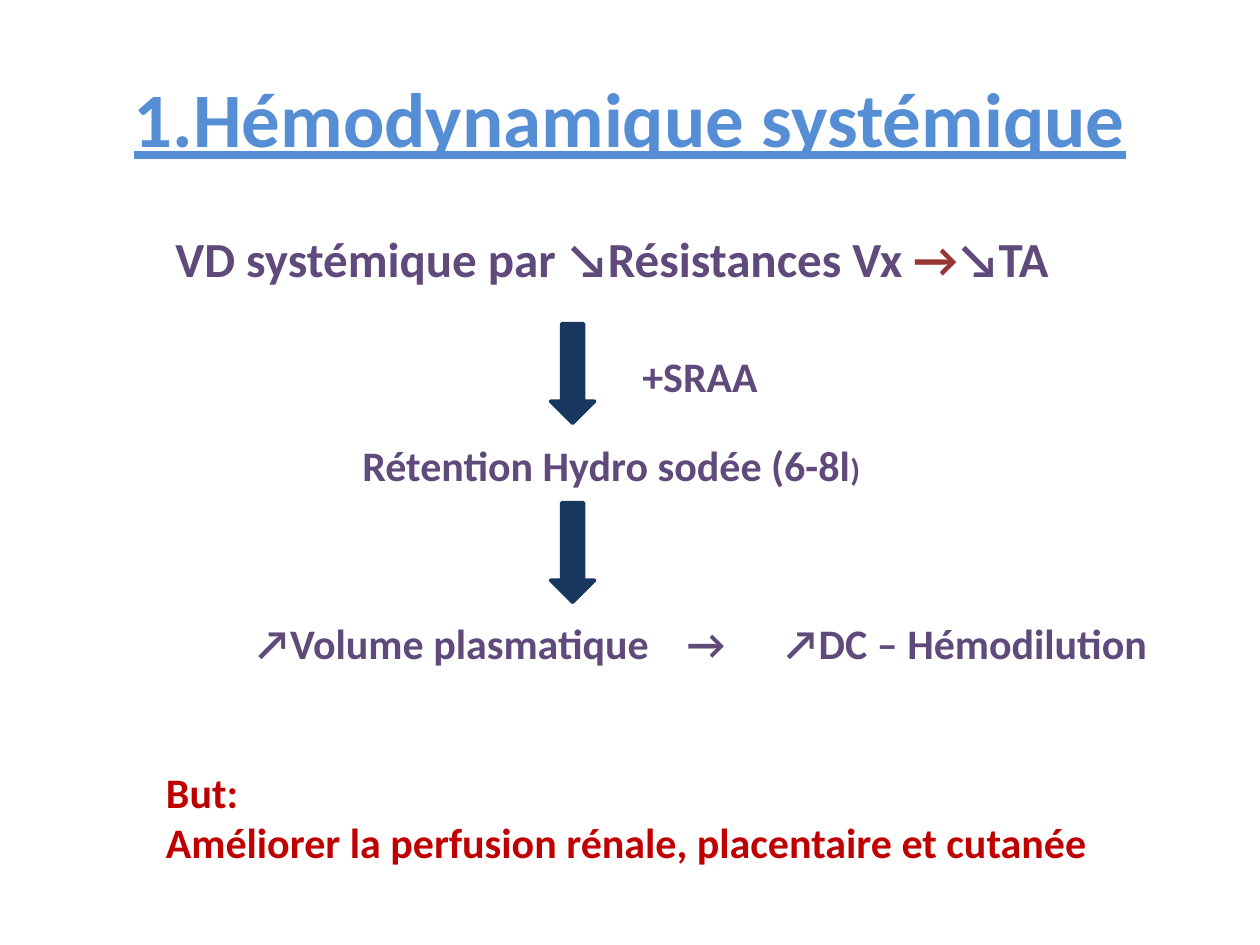
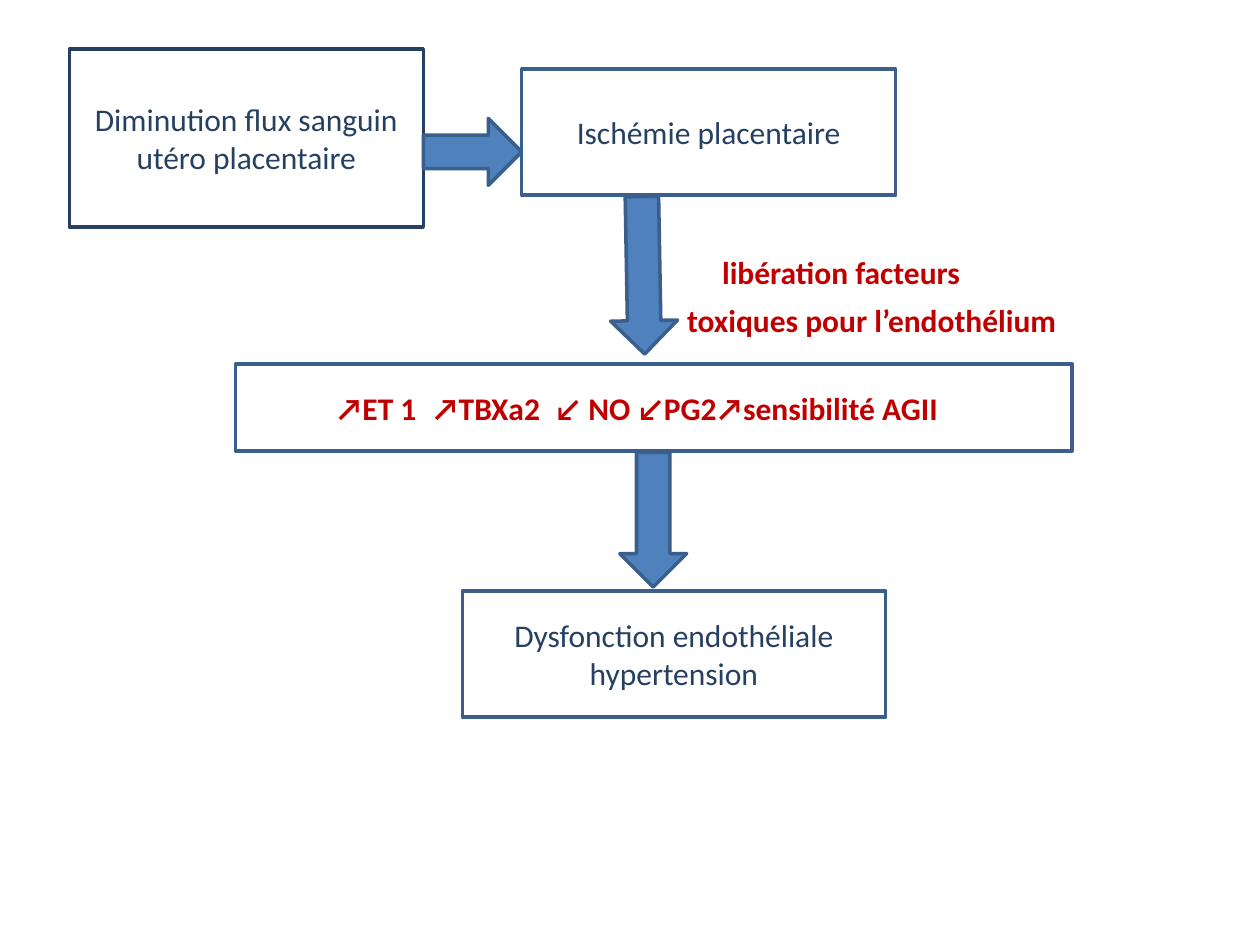
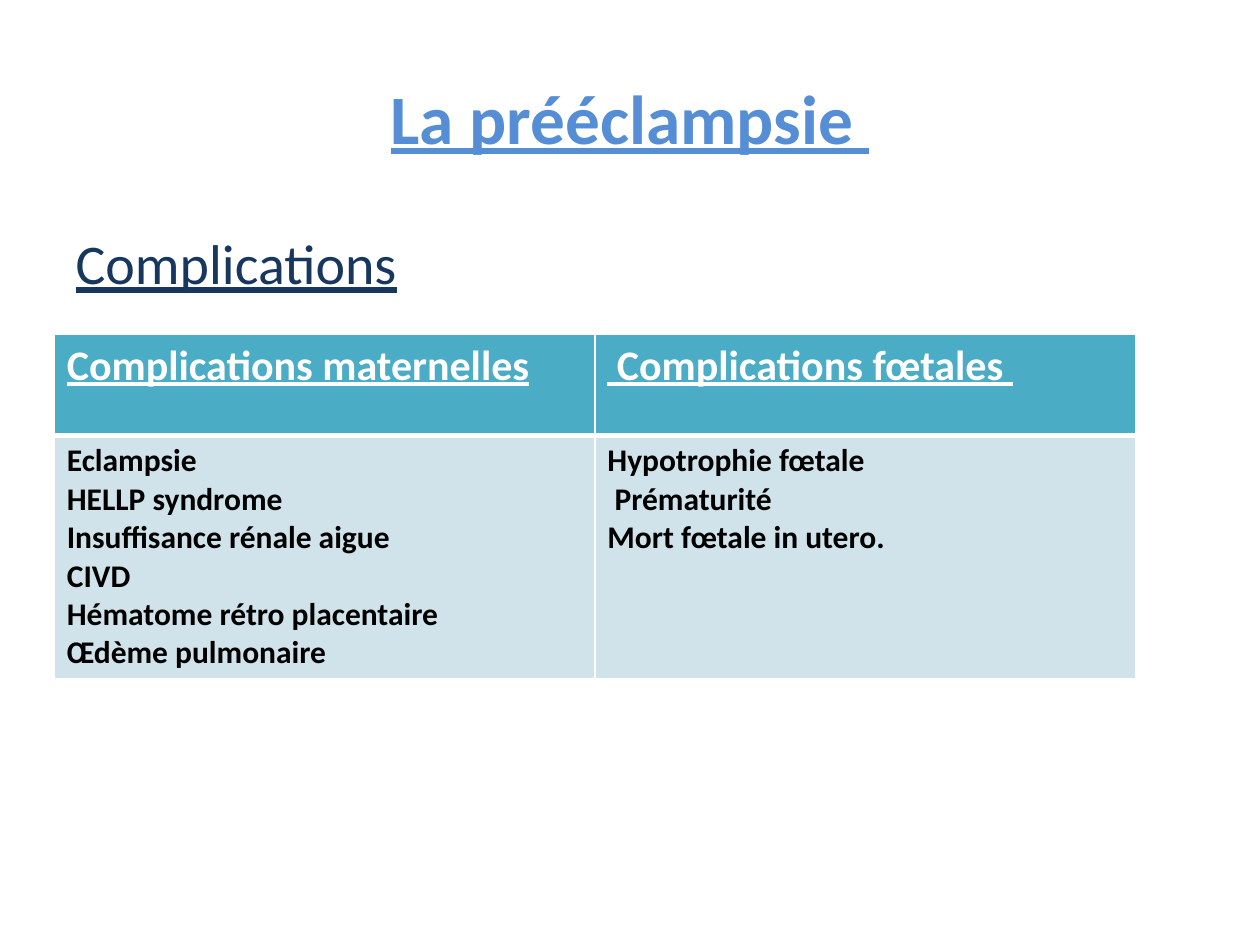
from dataclasses import dataclass

from lxml.etree import SubElement
from pptx import Presentation
from pptx.dml.color import RGBColor as Rgb
from pptx.enum.shapes import MSO_SHAPE as Shape
from pptx.enum.text import MSO_ANCHOR as Anchor
from pptx.enum.text import MSO_AUTO_SIZE as AutoSize
from pptx.enum.text import PP_ALIGN as Align
from pptx.oxml.ns import qn
from pptx.util import Pt


@dataclass(frozen=True)
class Theme:
    font: str = "Calibri"
    white: str = "FFFFFF"
    black: str = "000000"
    title: str = "558ED5"
    navy: str = "17375E"
    ink: str = "254061"
    purple: str = "604A7B"
    brown: str = "953735"
    red: str = "C00000"
    arrow: str = "4F81BD"
    outline: str = "3A5F8C"
    header: str = "4BACC6"
    cell: str = "D0E3EA"
    title_size: float = 44
    short_title_size: float = 39.6
    heading_size: float = 32
    lead_size: float = 28
    step_size: float = 24
    text_size: float = 18
    line_width: float = 2


THEME = Theme()
TITLE_AREA = (36, 21.6, 648, 90)
BODY_AREA = (36, 127, 648, 355)
FACTORS_AREA = (36, 141, 648, 341)


def text_style(size, color, bold=False, underline=False):
    return {
        "name": THEME.font,
        "size": Pt(size),
        "bold": bold,
        "underline": underline,
        "color": color,
    }


STEP = text_style(THEME.step_size, THEME.purple, bold=True)
LEAD = text_style(THEME.lead_size, THEME.purple, bold=True)
GOAL = text_style(THEME.step_size, THEME.red, bold=True)
BOXED = text_style(THEME.text_size, THEME.ink)
FACTOR = text_style(THEME.text_size, THEME.red, bold=True)
HEADING = text_style(THEME.heading_size, THEME.navy, underline=True)
TABLE_HEAD = text_style(THEME.step_size, THEME.white, bold=True, underline=True)
TABLE_BODY = text_style(THEME.text_size, THEME.black, bold=True)


def set_format(target, values):
    for name, value in values.items():
        if name == "color":
            target.color.rgb = Rgb.from_string(value)
        else:
            setattr(target, name, value)


def place(item, area):
    names = ("left", "top", "width", "height")
    set_format(item, {name: Pt(value) for name, value in zip(names, area)})


def add_tabs(para, stops):
    tab_list = SubElement(para._p.get_or_add_pPr(), qn("a:tabLst"))
    for stop in stops:
        SubElement(tab_list, qn("a:tab"), pos=str(Pt(stop)), algn="l")


def indent_plain(para, indent):
    properties = para._p.get_or_add_pPr()
    properties.set("marL", str(Pt(indent)))
    properties.set("indent", "0")
    SubElement(properties, qn("a:buNone"))


def write(frame, lines, style, align=Align.LEFT, tabs=(), indents=(), gap=0):
    for index, line in enumerate(lines):
        para = frame.paragraphs[0] if index == 0 else frame.add_paragraph()
        if indents:
            indent_plain(para, indents[index])
        if tabs:
            add_tabs(para, tabs)
        para.alignment = align
        para.space_before = Pt(gap if index else 0)
        spans = [(line, {})] if isinstance(line, str) else line
        for text, changes in spans:
            span = para.add_run()
            span.text = text
            set_format(span.font, {**style, **changes})


def add_page(deck, title=None, title_size=THEME.title_size):
    page = deck.slides.add_slide(deck.slide_layouts[1])
    heading = page.shapes.title
    if title is None:
        heading.element.getparent().remove(heading.element)
        return page
    place(heading, TITLE_AREA)
    set_format(heading.text_frame,
               {"auto_size": AutoSize.NONE, "vertical_anchor": Anchor.MIDDLE})
    style = text_style(title_size, THEME.title, bold=True, underline=True)
    write(heading.text_frame, [title], style, Align.CENTER)
    return page


def fill_body(page, lines, style, indents, area=BODY_AREA, gap=0):
    body = page.placeholders[1]
    place(body, area)
    body.text_frame.auto_size = AutoSize.NONE
    write(body.text_frame, lines, style, indents=indents, gap=gap)


def add_note(page, area, lines, style, wrap=False, tabs=()):
    box = page.shapes.add_textbox(*map(Pt, area))
    box.text_frame.word_wrap = wrap
    write(box.text_frame, lines, style, tabs=tabs)


def add_figure(page, kind, area, fill, line, rotation=0):
    figure = page.shapes.add_shape(kind, *map(Pt, area))
    figure.shadow.inherit = False
    figure.rotation = rotation
    figure.fill.solid()
    figure.fill.fore_color.rgb = Rgb.from_string(fill)
    set_format(figure.line, {"color": line, "width": Pt(THEME.line_width)})
    return figure


def add_box(page, area, lines, style=BOXED, line=THEME.outline,
            align=Align.CENTER, tabs=(), inset=7.2):
    box = add_figure(page, Shape.RECTANGLE, area, THEME.white, line)
    set_format(box.text_frame, {
        "word_wrap": True,
        "vertical_anchor": Anchor.MIDDLE,
        "margin_left": Pt(inset),
    })
    write(box.text_frame, lines, style, align, tabs)


def set_borders(cell, widths):
    properties = cell._tc.get_or_add_tcPr()
    for index, (side, width) in enumerate(zip("LRTB", widths)):
        line = SubElement(properties, qn(f"a:ln{side}"), w=str(Pt(width)))
        fill = SubElement(line, qn("a:solidFill"))
        SubElement(fill, qn("a:srgbClr"), val=THEME.white)
        properties.insert(index, line)


def add_complications(page, area, row_heights, columns):
    frame = page.shapes.add_table(2, len(columns), *map(Pt, area))
    table = frame.table
    for row, height in zip(table.rows, row_heights):
        row.height = Pt(height)
    looks = (
        (TABLE_HEAD, THEME.header, (1, 1, 1, 3)),
        (TABLE_BODY, THEME.cell, (1, 1, 3, 1)),
    )
    for column, (head, items) in enumerate(columns):
        for row, (lines, look) in enumerate(zip(([head], items), looks)):
            style, fill, borders = look
            cell = table.cell(row, column)
            cell.fill.solid()
            cell.fill.fore_color.rgb = Rgb.from_string(fill)
            set_borders(cell, borders)
            write(cell.text_frame, lines, style)


def build_hemodynamics(deck):
    page = add_page(deck, "1.Hémodynamique systémique")
    cause = [
        ("VD systémique par ↘Résistances Vx ", {}),
        ("→", {"color": THEME.brown}),
        ("↘TA", {}),
    ]
    fill_body(page, [cause], LEAD, [57])
    for top in (185, 287.3):
        add_figure(page, Shape.DOWN_ARROW, (314.6, top, 25.2, 56.9),
                   THEME.navy, THEME.navy)
    add_note(page, (360, 196.6, 81.4, 36), ["+SRAA"], STEP)
    retention = [
        ("Rétention Hydro sodée (6-8l", {}),
        (")", {"size": Pt(THEME.text_size)}),
    ]
    add_note(page, (200, 247.7, 302, 36), [retention], STEP)
    add_note(page, (138.6, 349.2, 540, 36),
             ["↗Volume plasmatique\t→\t↗DC – Hémodilution"], STEP,
             wrap=True, tabs=(247, 302))
    add_note(page, (87.8, 434.2, 561.6, 65.5),
             ["But:", "Améliorer la perfusion rénale, placentaire et cutanée"],
             GOAL, wrap=True)


def build_mechanism(deck):
    page = add_page(deck)
    fill_body(page, ["libération facteurs", "toxiques pour l’endothélium"],
              FACTOR, [369.4, 349.4], FACTORS_AREA, gap=6)
    add_box(page, (39.6, 28.1, 202.3, 101.5),
            ["Diminution flux sanguin utéro placentaire"], line=THEME.ink)
    add_box(page, (298.1, 39.6, 213.8, 72), ["Ischémie placentaire"])
    add_box(page, (134.6, 208.1, 478.1, 49.7),
            ["↗ET 1\t↗TBXa2\t↙ NO ↙PG2↗sensibilité AGII"], FACTOR,
            align=Align.LEFT, tabs=(55, 125), inset=57.5)
    arrows = (
        (Shape.RIGHT_ARROW, (241.9, 67.7, 56.2, 38.2), 0),
        (Shape.DOWN_ARROW, (348.5, 112.3, 38.2, 90), 359),
        (Shape.DOWN_ARROW, (354.2, 258.5, 38.2, 77), 0),
    )
    for kind, area, rotation in arrows:
        add_figure(page, kind, area, THEME.arrow, THEME.outline, rotation)
    add_box(page, (264.2, 337.7, 241.9, 72),
            ["Dysfonction endothéliale", "hypertension"])


def build_complications(deck):
    page = add_page(deck, "La prééclampsie ", THEME.short_title_size)
    fill_body(page, ["Complications"], HEADING, [0])
    maternal = ["Eclampsie", "HELLP syndrome", "Insuffisance rénale aigue",
                "CIVD", "Hématome rétro placentaire", "Œdème pulmonaire"]
    fetal = ["Hypotrophie fœtale", " Prématurité", "Mort fœtale in utero."]
    columns = (
        ("Complications maternelles", maternal),
        (" Complications fœtales ", fetal),
    )
    add_complications(page, (31, 190.8, 617.8, 197), (58, 139), columns)


def main():
    deck = Presentation()
    set_format(deck, {"slide_width": Pt(720), "slide_height": Pt(540)})
    build_hemodynamics(deck)
    build_mechanism(deck)
    build_complications(deck)
    deck.save("out.pptx")


if __name__ == "__main__":
    main()
